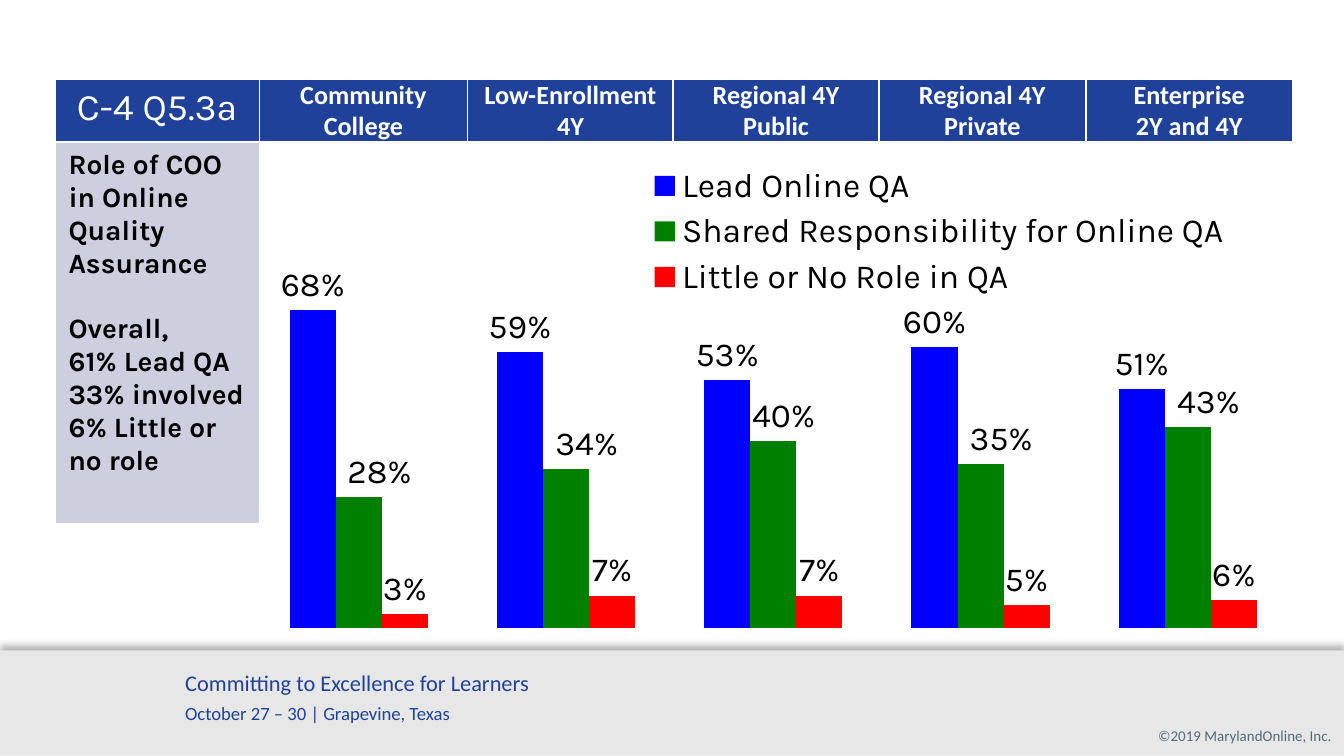
from lxml import etree
from pptx import Presentation
from pptx.chart.data import CategoryChartData
from pptx.dml.color import RGBColor
from pptx.enum import chart as charts, shapes, text
from pptx.oxml import parse_xml
from pptx.oxml.ns import nsdecls, qn
from pptx.util import Inches, Pt

NAVY, WHITE, BLACK = "1F419A", "FFFFFF", "000000"
HEADERS = ["Community College", "Low-Enrollment 4Y", "Regional 4Y Public",
           "Regional 4Y Private", "Enterprise\n2Y and 4Y"]
SUMMARY = ["Role of COO in Online Quality Assurance", "Overall,",
           "61% Lead QA", "33% involved", "6% Little or no role"]
SERIES = [
    ("Lead Online QA", "0000FF", (0.68, 0.59, 0.53, 0.60, 0.51)),
    ("Shared Responsibility for Online QA", "008000", (0.28, 0.34, 0.40, 0.35, 0.43)),
    ("Little or No Role in QA", "FF0000", (0.03, 0.07, 0.07, 0.05, 0.06)),
]
SHARED_LABEL_SHIFTS = [0.02, 0.02, 0.01, 0.02, 0.02]


def color(value):
    return RGBColor.from_string(value)


def style_text(frame, size, font, hue, bold=False, align=text.PP_ALIGN.LEFT):
    for para in frame.paragraphs:
        para.alignment = align
        for span in para.runs:
            span.font.size, span.font.name, span.font.bold = Pt(size), font, bold
            span.font.color.rgb = color(hue)


def add_footer_band(page):
    band = page.shapes.add_shape(shapes.MSO_SHAPE.RECTANGLE, 0, Inches(4.84),
                                 Inches(10), Inches(0.78))
    band.fill.solid()
    band.fill.fore_color.rgb = color("E7E7E7")
    band.line.fill.background()
    # Soft shadow cast upwards
    band.shadow.inherit = False
    effects = band._element.spPr.find(qn("a:effectLst"))
    effects.append(parse_xml(
        f'<a:outerShdw {nsdecls("a")} blurRad="{Pt(4)}" dist="{Pt(3)}" '
        'dir="16200000" rotWithShape="0"><a:srgbClr val="000000">'
        '<a:alpha val="30000"/></a:srgbClr></a:outerShdw>'))


def add_text(page, left, top, width, height, lines):
    box = page.shapes.add_textbox(Inches(left), Inches(top), Inches(width), Inches(height))
    box.text_frame.word_wrap = True
    box.text_frame.text = "\n".join(lines)
    return box.text_frame


def style_cell(cell, fill=None):
    properties = cell._tc.get_or_add_tcPr()
    for side in ("lnL", "lnR", "lnT", "lnB"):
        properties.append(parse_xml(
            f'<a:{side} {nsdecls("a")} w="{Pt(1)}"><a:solidFill>'
            f'<a:srgbClr val="{WHITE}"/></a:solidFill></a:{side}>'))
    if fill:
        cell.fill.solid()
        cell.fill.fore_color.rgb = color(fill)
    else:
        cell.fill.background()


def add_summary_table(page):
    table = page.shapes.add_table(2, 6, Inches(0.41), Inches(0.59),
                                  Inches(9.21), Inches(3.3)).table
    table.first_row = table.horz_banding = False
    for column, width in zip(table.columns, [1.52, 1.55, 1.53, 1.53, 1.54, 1.54]):
        column.width = Inches(width)
    for row, height in zip(table.rows, [0.46, 2.84]):
        row.height = Inches(height)
    for index in range(6):
        style_cell(table.cell(0, index), NAVY)
        style_cell(table.cell(1, index), None if index else "CDCFDE")
    table.cell(1, 1).merge(table.cell(1, 5))

    # Header row
    corner = table.cell(0, 0)
    corner.text = "C-4 Q5.3a"
    style_text(corner.text_frame, 20, "Karla", WHITE, align=text.PP_ALIGN.CENTER)
    for index, header in enumerate(HEADERS, 1):
        cell = table.cell(0, index)
        cell.margin_left = cell.margin_right = Inches(0.07)
        cell.margin_top = cell.margin_bottom = 0
        cell.text = header
        style_text(cell.text_frame, 14, "Calibri", WHITE, True, text.PP_ALIGN.CENTER)

    # Summary column
    frame = table.cell(1, 0).text_frame
    frame.text = "\n".join(SUMMARY)
    style_text(frame, 15, "Karla", BLACK, True)
    frame.paragraphs[1].space_before = Pt(17.5)


def make_layout(x, y, width=None, height=None, inner=False):
    layout = parse_xml(f'<c:layout {nsdecls("c")}><c:manualLayout/></c:layout>')
    values = [("x", x), ("y", y)]
    if width:
        values = ([("layoutTarget", "inner")] if inner else []) + [
            ("xMode", "edge"), ("yMode", "edge")] + values + [("w", width), ("h", height)]
    for tag, value in values:
        etree.SubElement(layout[0], qn(f"c:{tag}")).set("val", str(value))
    return layout


def set_layout(parent, layout, after=None):
    for old in parent.findall(qn("c:layout")):
        parent.remove(old)
    if after is None:
        parent.insert(0, layout)
    else:
        parent.find(qn(after)).addnext(layout)


def add_role_chart(page):
    data = CategoryChartData(number_format="0%")
    data.categories = ["1", "2", "3", "4", "5"]
    for name, _, values in SERIES:
        data.add_series(name, values)
    chart = page.shapes.add_chart(
        charts.XL_CHART_TYPE.COLUMN_CLUSTERED, Inches(1.9), Inches(1.19),
        Inches(7.71), Inches(3.67), data).chart
    chart.has_title = False
    chart.font.size, chart.font.name = Pt(18), "Karla"
    chart.font.color.rgb = color(BLACK)

    # Hidden axes
    chart.value_axis.minimum_scale, chart.value_axis.maximum_scale = 0, 0.8
    chart.value_axis.has_major_gridlines = False
    chart.value_axis.visible = chart.category_axis.visible = False

    # Columns and their labels
    plot = chart.plots[0]
    plot.gap_width, plot.overlap, plot.vary_by_categories = 150, 0, False
    for series, (_, hue, _) in zip(plot.series, SERIES):
        series.format.fill.solid()
        series.format.fill.fore_color.rgb = color(hue)
        labels = series.data_labels
        labels.show_value = True
        labels.number_format, labels.number_format_is_linked = "0%", False
        labels.position = charts.XL_LABEL_POSITION.OUTSIDE_END
    for index, shift in enumerate(SHARED_LABEL_SHIFTS):
        label = plot.series[1].points[index].data_label
        label.font.size, label.font.name = Pt(18), "Karla"
        label.position = charts.XL_LABEL_POSITION.OUTSIDE_END
        set_layout(label._dLbl, make_layout(shift, 0), "c:idx")

    # Legend above the columns
    chart.has_legend = True
    chart.legend.position = charts.XL_LEGEND_POSITION.RIGHT
    chart.legend.include_in_layout = False
    set_layout(chart.legend._element, make_layout(0.37, 0, 0.58, 0.29), "c:legendPos")
    set_layout(chart._chartSpace.chart.plotArea, make_layout(0, 0.19, 1, 0.76, inner=True))


def main():
    deck = Presentation()
    # Widescreen, 16 to 9
    deck.slide_width = Inches(10)
    deck.slide_height = Inches(10) * 9 // 16
    page = deck.slides.add_slide(deck.slide_layouts[6])

    # Footer
    add_footer_band(page)
    notice = add_text(page, 8.32, 5.36, 1.59, 0.24, ["©2019 MarylandOnline, Inc."])
    notice.margin_right = 0
    style_text(notice, 8, "Calibri", "526C7C", align=text.PP_ALIGN.RIGHT)
    event = add_text(page, 1.28, 4.93, 2.94, 0.51, [
        "Committing to Excellence for Learners", "October 27 – 30 | Grapevine, Texas"])
    style_text(event, 12, "Calibri", NAVY)
    event.paragraphs[1].space_before = Pt(3)
    event.paragraphs[1].runs[0].font.size = Pt(10)

    # Survey results
    add_summary_table(page)
    add_role_chart(page)
    deck.save("out.pptx")


if __name__ == "__main__":
    main()
